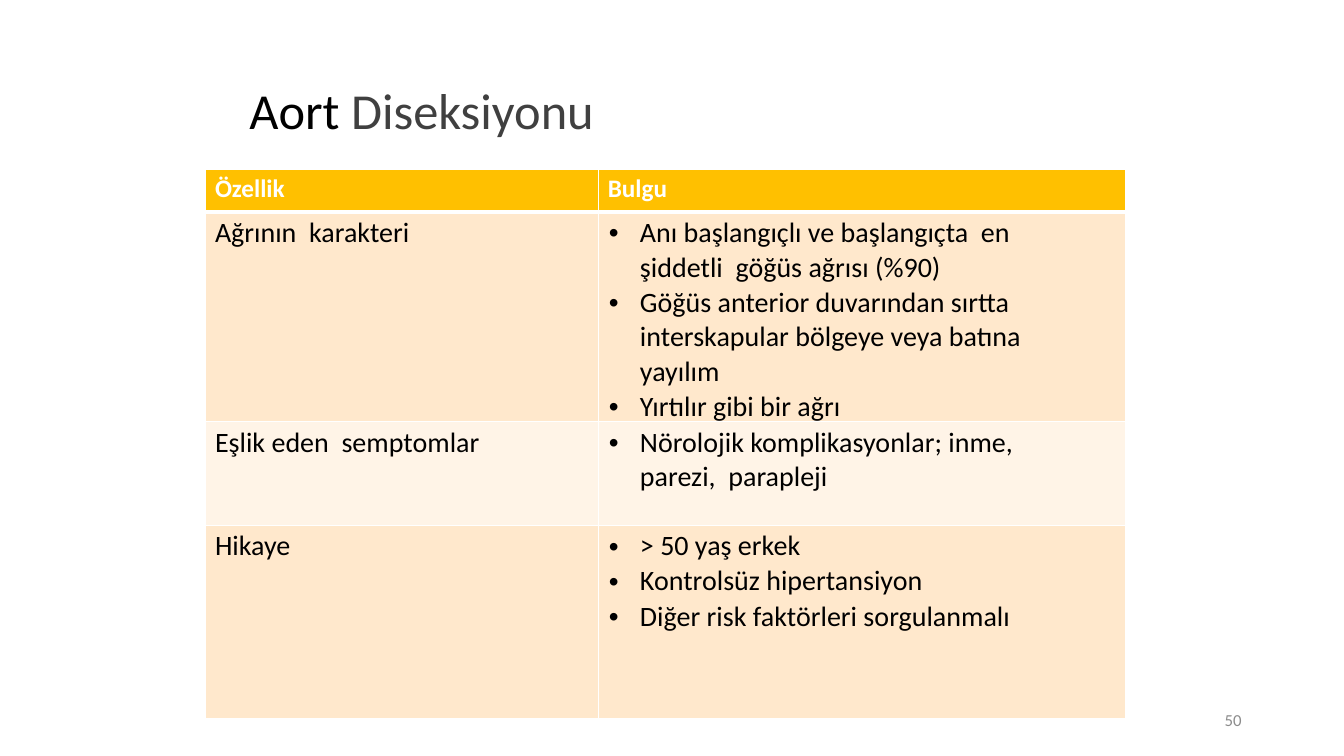
from dataclasses import dataclass

from lxml import etree
from pptx import Presentation, util as u
from pptx.dml.color import RGBColor
from pptx.enum import text
from pptx.oxml import ns

# The slide is a grid of 160 columns by 90 rows of equal square units.
UNIT = u.Inches(1) / 12


@dataclass(frozen=True)
class Theme:
    font: str = "Calibri"
    black: str = "000000"
    title_gray: str = "404040"
    number_gray: str = "8C8C8C"
    white: str = "FFFFFF"
    header: str = "FFC000"
    bands: tuple = ("FFE8CC", "FFF4E7")
    title_size: int = 36
    header_size: int = 18
    body_size: int = 20
    number_size: int = 12


THEME = Theme()
HEADER = ("Özellik", "Bulgu")
FINDINGS = (
    ("Ağrının  karakteri", (
        "Anı başlangıçlı ve başlangıçta  en şiddetli  göğüs ağrısı (%90)",
        "Göğüs anterior duvarından sırtta  interskapular bölgeye veya batına yayılım",
        "Yırtılır gibi bir ağrı")),
    ("Eşlik eden  semptomlar", (
        "Nörolojik komplikasyonlar; inme, parezi,  parapleji",)),
    ("Hikaye", (
        "> 50 yaş erkek",
        "Kontrolsüz hipertansiyon",
        "Diğer risk faktörleri sorgulanmalı")),
)
COLUMN_SHARES = (3.9, 5.23)
ROW_SHARES = (0.42, 2.08, 1.03, 1.91)


def grid(units):
    return round(units * UNIT)


def apply(target, values):
    for name, value in values.items():
        setattr(target, name, value)


def add_span(para, words, size, color, bold=False):
    span = para.add_run()
    span.text = words
    apply(span.font, {"name": THEME.font, "size": u.Pt(size), "bold": bold})
    span.font.color.rgb = RGBColor.from_string(color)


def add_text(page, box, spans, size, indent=1.2, align=text.PP_ALIGN.LEFT):
    frame = page.shapes.add_textbox(*map(grid, box)).text_frame
    apply(frame, {"word_wrap": True, "margin_left": grid(indent),
                  "vertical_anchor": text.MSO_ANCHOR.MIDDLE})
    para = frame.paragraphs[0]
    apply(para, {"alignment": align, "line_spacing": 0.9})
    for words, color in spans:
        add_span(para, words, size, color)


def add_title(page, box):
    spans = (("Aort ", THEME.black), ("Diseksiyonu", THEME.title_gray))
    add_text(page, box, spans, THEME.title_size, indent=18.7)


def add_page_number(page, box):
    add_text(page, box, (("50", THEME.number_gray),), THEME.number_size,
             align=text.PP_ALIGN.RIGHT)


def set_borders(cell, bottom=1, top=1):
    properties = cell._tc.get_or_add_tcPr()
    widths = {"lnL": 1, "lnR": 1, "lnT": top, "lnB": bottom}
    for place, (side, width) in enumerate(widths.items()):
        line = etree.Element(ns.qn("a:" + side), w=str(u.Pt(width)))
        fill = etree.SubElement(line, ns.qn("a:solidFill"))
        etree.SubElement(fill, ns.qn("a:srgbClr"), val=THEME.white)
        properties.insert(place, line)


def add_bullet(para):
    properties = para._p.get_or_add_pPr()
    apply_indent = {"marL": u.Inches(0.41), "indent": u.Inches(-0.31)}
    for name, length in apply_indent.items():
        properties.set(name, str(length))
    etree.SubElement(properties, ns.qn("a:buFont"), typeface="Arial")
    etree.SubElement(properties, ns.qn("a:buChar"), char="•")


def fill_cell(cell, lines, fill, size, color, bold=False, bulleted=False):
    apply(cell, {"margin_left": 0 if bulleted else grid(1.1),
                 "margin_right": grid(8.4) if bulleted else 0,
                 "margin_top": grid(0.4), "margin_bottom": 0})
    cell.fill.solid()
    cell.fill.fore_color.rgb = RGBColor.from_string(fill)
    for place, line in enumerate(lines):
        frame = cell.text_frame
        para = frame.add_paragraph() if place else frame.paragraphs[0]
        apply(para, {"line_spacing": 1.01,
                     "space_before": u.Pt(0.3 if place else 2.2)})
        if bulleted:
            add_bullet(para)
        add_span(para, line, size, color, bold)


def add_findings_table(page, box):
    left, top, width, height = map(grid, box)
    table = page.shapes.add_table(len(ROW_SHARES), len(COLUMN_SHARES),
                                  left, top, width, height).table
    for column, share in zip(table.columns, COLUMN_SHARES):
        column.width = round(width * share / sum(COLUMN_SHARES))
    for row, share in zip(table.rows, ROW_SHARES):
        row.height = round(height * share / sum(ROW_SHARES))

    for column, heading in enumerate(HEADER):
        cell = table.cell(0, column)
        fill_cell(cell, (heading,), THEME.header, THEME.header_size,
                  THEME.white, bold=True)
        set_borders(cell, bottom=3)

    for row, (feature, findings) in enumerate(FINDINGS, start=1):
        band = THEME.bands[(row - 1) % len(THEME.bands)]
        for column, lines in enumerate(((feature,), findings)):
            cell = table.cell(row, column)
            fill_cell(cell, lines, band, THEME.body_size, THEME.black,
                      bulleted=column == 1)
            set_borders(cell, top=3 if row == 1 else 1)


def main():
    deck = Presentation()
    apply(deck, {"slide_width": grid(160), "slide_height": grid(90)})
    page = deck.slides.add_slide(deck.slide_layouts[6])
    add_title(page, (11, 4.8, 138, 17.4))
    add_page_number(page, (113, 83.4, 36, 4.8))
    add_findings_table(page, (24.5, 20.2, 109.5, 65.3))
    deck.save("out.pptx")


if __name__ == "__main__":
    main()
